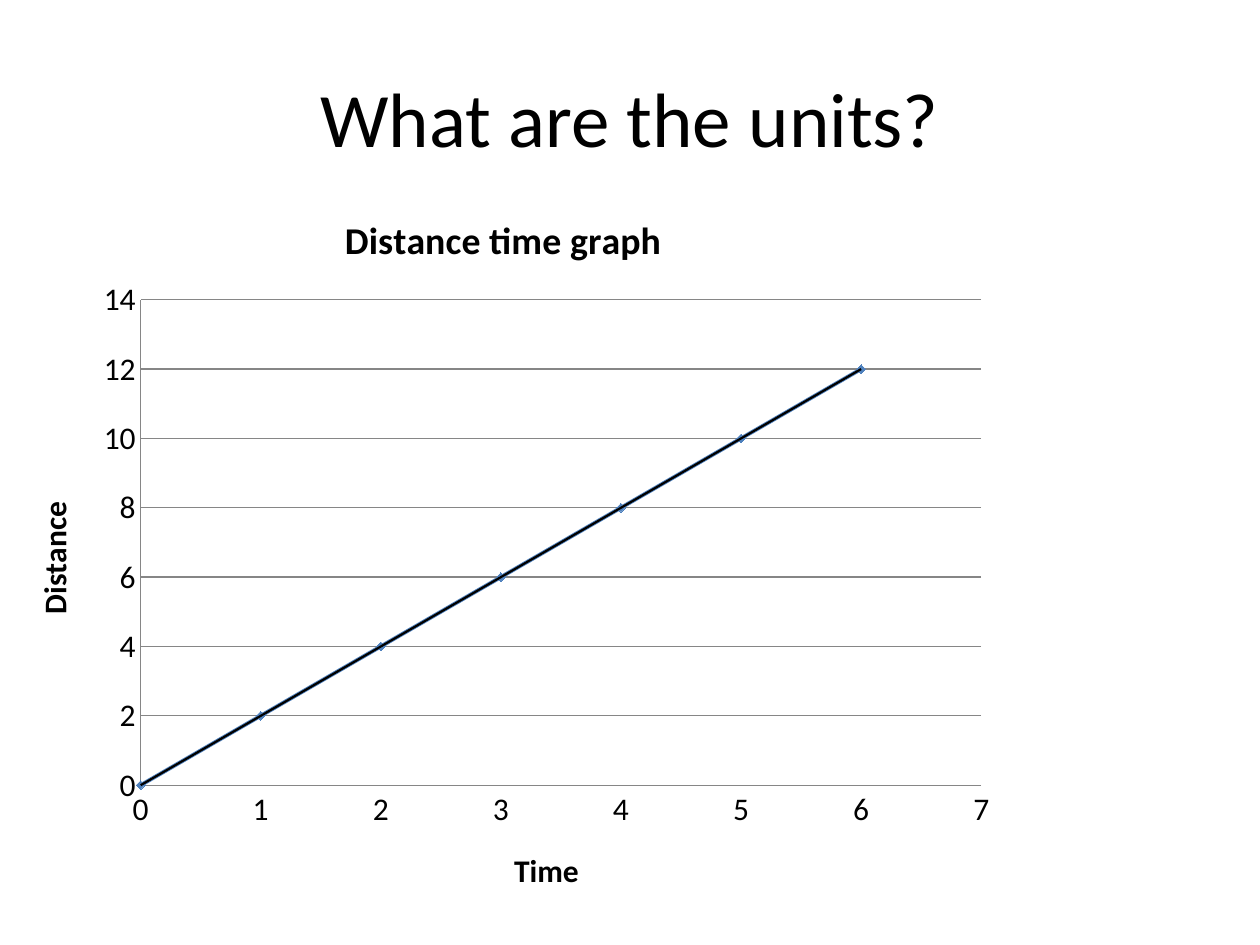
from lxml import etree
from pptx import Presentation
from pptx.chart.data import XyChartData
from pptx.dml.color import RGBColor
from pptx.enum.chart import XL_CHART_TYPE, XL_MARKER_STYLE, XL_TICK_MARK
from pptx.enum.text import MSO_ANCHOR, PP_ALIGN
from pptx.oxml import parse_xml
from pptx.oxml.ns import nsdecls, qn
from pptx.util import Cm, Pt

SCATTER_LINES = XL_CHART_TYPE.XY_SCATTER_LINES
DIAMOND = XL_MARKER_STYLE.DIAMOND
NO_TICKS = XL_TICK_MARK.NONE
CENTER = PP_ALIGN.CENTER
MIDDLE = MSO_ANCHOR.MIDDLE

FONT = "Calibri"
COLORS = {"text": "000000", "series": "4F81BD", "grid": "868686", "trend": "000000"}
TIMES = range(7)
SPEED = 2


def rgb(name):
    return RGBColor.from_string(COLORS[name])


def format_font(font, size, bold=False, color="text"):
    font.name = FONT
    font.size = Pt(size)
    font.bold = bold
    font.color.rgb = rgb(color)


def write_text(frame, text, size=18, bold=False, color="text", align=CENTER):
    frame.text = text
    paragraph = frame.paragraphs[0]
    paragraph.alignment = align
    format_font(paragraph.runs[0].font, size, bold, color)


def format_line(line, color, width):
    line.color.rgb = rgb(color)
    line.width = Pt(width)


def add_heading(slide, text):
    heading = slide.shapes.title
    heading.left, heading.top = Cm(1.27), Cm(0.76)
    heading.width, heading.height = Cm(22.86), Cm(3.18)
    heading.text_frame.vertical_anchor = MIDDLE
    write_text(heading.text_frame, text, size=44)


def format_axis(axis, title, maximum, step, gridlines):
    axis.minimum_scale, axis.maximum_scale = 0, maximum
    axis.major_unit = step
    axis.major_tick_mark = axis.minor_tick_mark = NO_TICKS
    axis.has_major_gridlines = gridlines
    if gridlines:
        format_line(axis.major_gridlines.format.line, "grid", 0.75)
    format_line(axis.format.line, "grid", 0.75)
    format_font(axis.tick_labels.font, 18)
    write_text(axis.axis_title.text_frame, title, bold=True)


def add_linear_trend(series):
    trend = parse_xml(
        f'<c:trendline {nsdecls("c", "a")}><c:spPr><a:ln w="{Pt(1.25)}"><a:solidFill>'
        f'<a:srgbClr val="{COLORS["trend"]}"/></a:solidFill></a:ln></c:spPr>'
        '<c:trendlineType val="linear"/><c:dispRSqr val="0"/><c:dispEq val="0"/>'
        '</c:trendline>')
    series._element.find(qn("c:xVal")).addprevious(trend)


def place_plot_area(chart, **fractions):
    """Fix the inner plot area as fractions x, y, w and h of the chart."""
    plot_area = chart._chartSpace.chart.plotArea
    for old in plot_area.findall(qn("c:layout")):
        plot_area.remove(old)
    layout = etree.Element(qn("c:layout"))
    manual = etree.SubElement(layout, qn("c:manualLayout"))
    settings = {"layoutTarget": "inner", "xMode": "edge", "yMode": "edge", **fractions}
    for tag, value in settings.items():
        etree.SubElement(manual, qn(f"c:{tag}")).set("val", str(value))
    plot_area.insert(0, layout)


def add_distance_chart(slide):
    data = XyChartData()
    journey = data.add_series("Series 1")
    for time in TIMES:
        journey.add_data_point(time, SPEED * time)
    chart = slide.shapes.add_chart(
        SCATTER_LINES, Cm(0.1), Cm(3.73), Cm(20.27), Cm(14.83), data).chart

    format_font(chart.font, 18)
    chart.has_legend = False
    chart.has_title = True
    write_text(chart.chart_title.text_frame, "Distance time graph ", size=21.6, bold=True)
    chart.chart_title.include_in_layout = False
    format_axis(chart.category_axis, "Time", maximum=7, step=1, gridlines=False)
    format_axis(chart.value_axis, "Distance ", maximum=14, step=2, gridlines=True)
    place_plot_area(chart, x=0.135, y=0.156, w=0.836, h=0.66)

    plot = chart.plots[0]
    plot.vary_by_categories = False
    distance = plot.series[0]
    distance.smooth = False
    format_line(distance.format.line, "series", 2.25)
    distance.marker.style = DIAMOND
    distance.marker.size = 5
    distance.marker.format.fill.solid()
    distance.marker.format.fill.fore_color.rgb = rgb("series")
    format_line(distance.marker.format.line, "series", 0.75)
    add_linear_trend(distance)


def main():
    deck = Presentation()
    deck.slide_width, deck.slide_height = Cm(25.4), Cm(19.05)
    slide = deck.slides.add_slide(deck.slide_layouts[5])
    add_heading(slide, "What are the units?")
    add_distance_chart(slide)
    deck.save("out.pptx")


if __name__ == "__main__":
    main()
